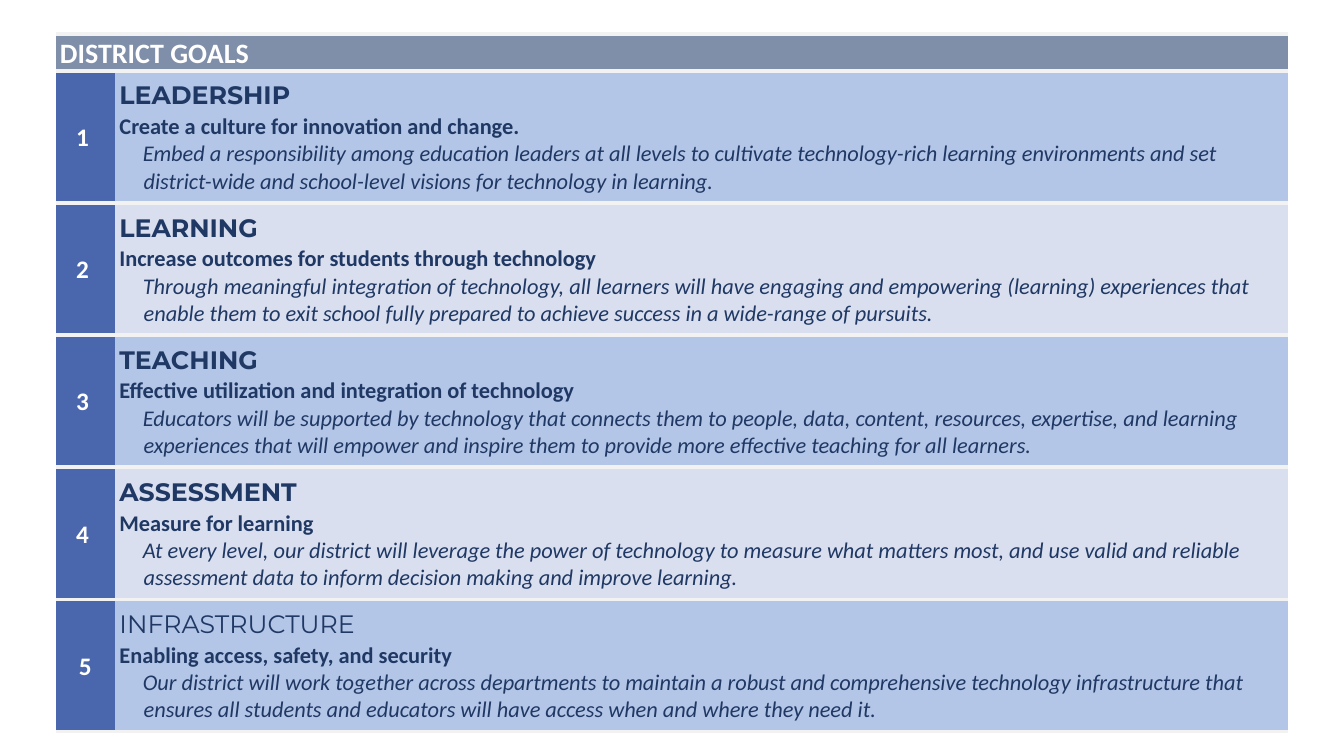
import pptx
import pptx.util
import pptx.dml.color
import pptx.enum.text
import pptx.oxml
import pptx.oxml.ns

Cm, Pt = pptx.util.Cm, pptx.util.Pt
Align = pptx.enum.text.PP_ALIGN
Anchor = pptx.enum.text.MSO_ANCHOR

HEAD = "DISTRICT GOALS"
GOALS = [
    ("1 ", "LEADERSHIP", "Create a culture for innovation and change.",
     "Embed a responsibility among education leaders at all levels to cultivate "
     "technology-rich learning environments and set district-wide and school-level "
     "visions for technology in learning."),
    ("2 ", "LEARNING", "Increase outcomes for students through technology",
     "Through meaningful integration of technology, all learners will have engaging "
     "and empowering (learning) experiences that enable them to exit school fully "
     "prepared to achieve success in a wide-range of pursuits."),
    ("3 ", "TEACHING", "Effective utilization and integration of technology",
     "Educators will be supported by technology that connects them to people, data, "
     "content, resources, expertise, and learning experiences that will empower and "
     "inspire them to provide more effective teaching for all learners."),
    ("4 ", "ASSESSMENT", "Measure for learning",
     "At every level, our district will leverage the power of technology to measure "
     "what matters most, and use valid and reliable assessment data to inform "
     "decision making and improve learning."),
    ("5", "INFRASTRUCTURE", "Enabling access, safety, and security",
     "Our district will work together across departments to maintain a robust and "
     "comprehensive technology infrastructure that ensures all students and educators "
     "will have access when and where they need it."),
]
LIGHT = {"INFRASTRUCTURE"}  # topics set in regular weight

WHITE, NAVY, RULE = "FFFFFF", "1F3864", "F2F2F2"
SLATE, BLUE, BANDS = "7F8FA9", "4A66AC", ("B4C6E7", "D9DFEF")
LEFT, TOP = Cm(1.4), Cm(0.86)
COLS = (Cm(1.5), Cm(29.57))
HEAD_H, GOAL_H = Cm(0.87), Cm(3.33)
HANG = (Cm(0.46), Cm(-0.46))
INSET = (Cm(0.61), Cm(-0.02))

FONTS = {
    "head": dict(name="Calibri", size=Pt(20), bold=True, italic=False),
    "num": dict(name="Calibri", size=Pt(18), bold=True, italic=False),
    "topic": dict(name="Montserrat", size=Pt(18), bold=True, italic=False),
    "aim": dict(name="Calibri", size=Pt(16), bold=True, italic=False),
    "text": dict(name="Calibri", size=Pt(16), bold=False, italic=True),
}
CELL = dict(margin_left=Cm(0.11), margin_right=Cm(0.11), margin_top=0,
            margin_bottom=0, vertical_anchor=Anchor.MIDDLE)


def put(obj, vals):
    for key, val in vals.items():
        setattr(obj, key, val)


def rgb(code):
    return pptx.dml.color.RGBColor.from_string(code)


def dress(cell, fill):
    """Set the margins, borders and fill of a cell."""
    put(cell, CELL)
    props = cell._tc.get_or_add_tcPr()
    space = pptx.oxml.ns.nsdecls("a")
    for side in "LRTB":
        if side in "LR":
            xml = f'<a:ln{side} {space} w="0"><a:noFill/></a:ln{side}>'
        else:
            xml = (f'<a:ln{side} {space} w="{Pt(3)}"><a:solidFill>'
                   f'<a:srgbClr val="{RULE}"/></a:solidFill></a:ln{side}>')
        props.append(pptx.oxml.parse_xml(xml))
    cell.fill.solid()
    cell.fill.fore_color.rgb = rgb(fill)


def write(cell, lines, color):
    """Write (text, font key, (margin, indent), spacing, align) lines."""
    frame = cell.text_frame
    for i, (text, kind, (margin, indent), space, align) in enumerate(lines):
        para = frame.add_paragraph() if i else frame.paragraphs[0]
        put(para, dict(line_spacing=space, alignment=align))
        props = para._p.get_or_add_pPr()
        props.set("marL", str(int(margin)))
        props.set("indent", str(int(indent)))
        run = para.add_run()
        run.text = text
        put(run.font, FONTS[kind])
        run.font.color.rgb = rgb(color)
        if text in LIGHT:
            run.font.bold = False


def main():
    deck = pptx.Presentation()
    put(deck, dict(slide_width=Cm(33.87), slide_height=Cm(19.05)))
    slide = deck.slides.add_slide(deck.slide_layouts[6])
    count = len(GOALS)
    table = slide.shapes.add_table(count + 1, 2, LEFT, TOP, sum(COLS),
                                   HEAD_H + count * GOAL_H).table
    put(table, dict(first_row=False, horz_banding=False))
    for col, width in zip(table.columns, COLS):
        col.width = width
    for i, row in enumerate(table.rows):
        row.height = GOAL_H if i else HEAD_H

    top = table.cell(0, 0)
    top.merge(table.cell(0, 1))
    for cell in table.rows[0].cells:
        dress(cell, SLATE)
    write(top, [(HEAD, "head", (0, 0), 1.07, Align.LEFT)], WHITE)

    for i, (num, topic, aim, text) in enumerate(GOALS):
        mark, body = table.rows[i + 1].cells
        dress(mark, BLUE)
        write(mark, [(num, "num", HANG, 1.07, Align.CENTER)], WHITE)
        dress(body, BANDS[i % 2])
        write(body, [(topic, "topic", HANG, 1.07, Align.LEFT),
                     (aim, "aim", HANG, 1.07, Align.LEFT),
                     (text, "text", INSET, 1.0, Align.LEFT)], NAVY)
    deck.save("out.pptx")


if __name__ == "__main__":
    main()
